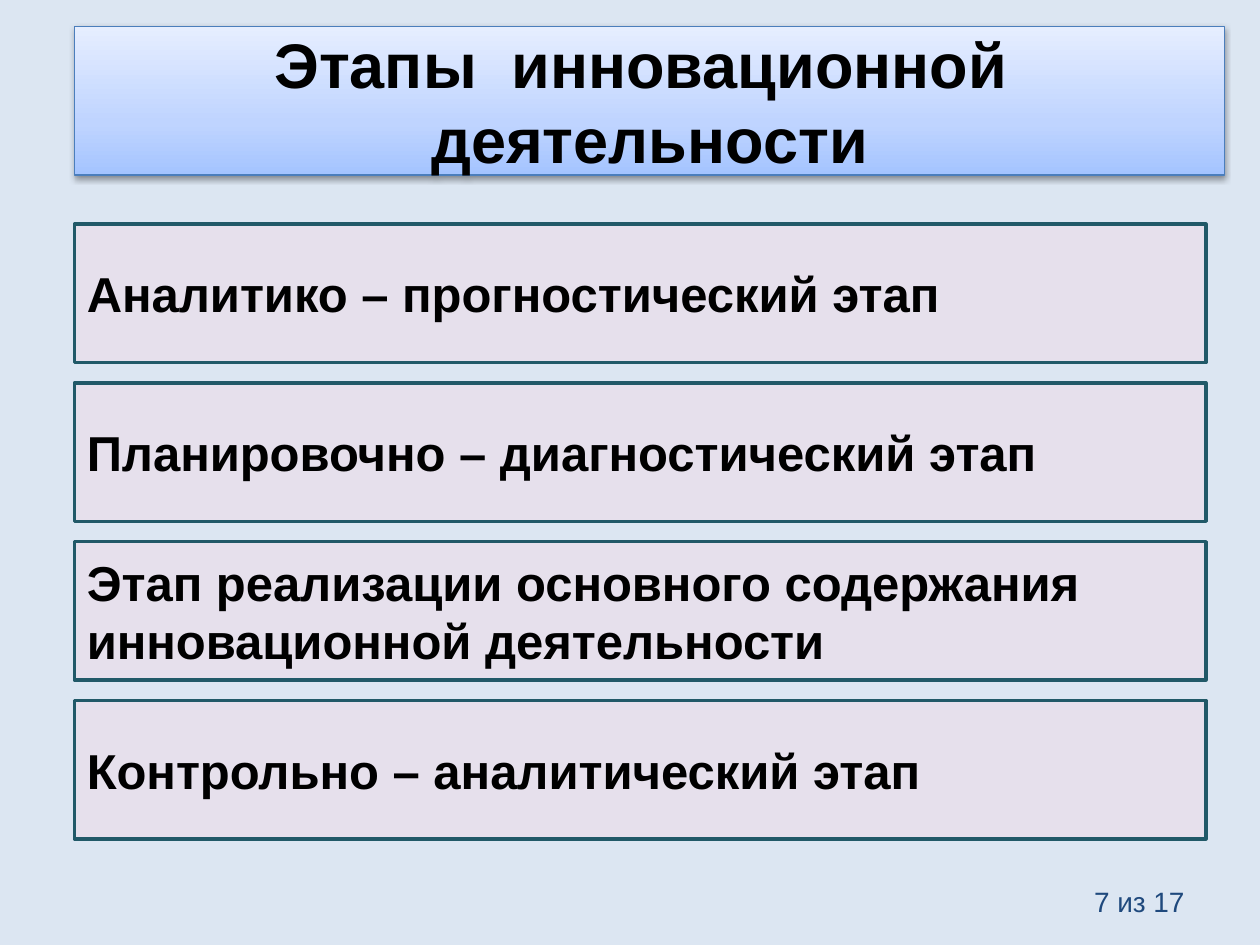
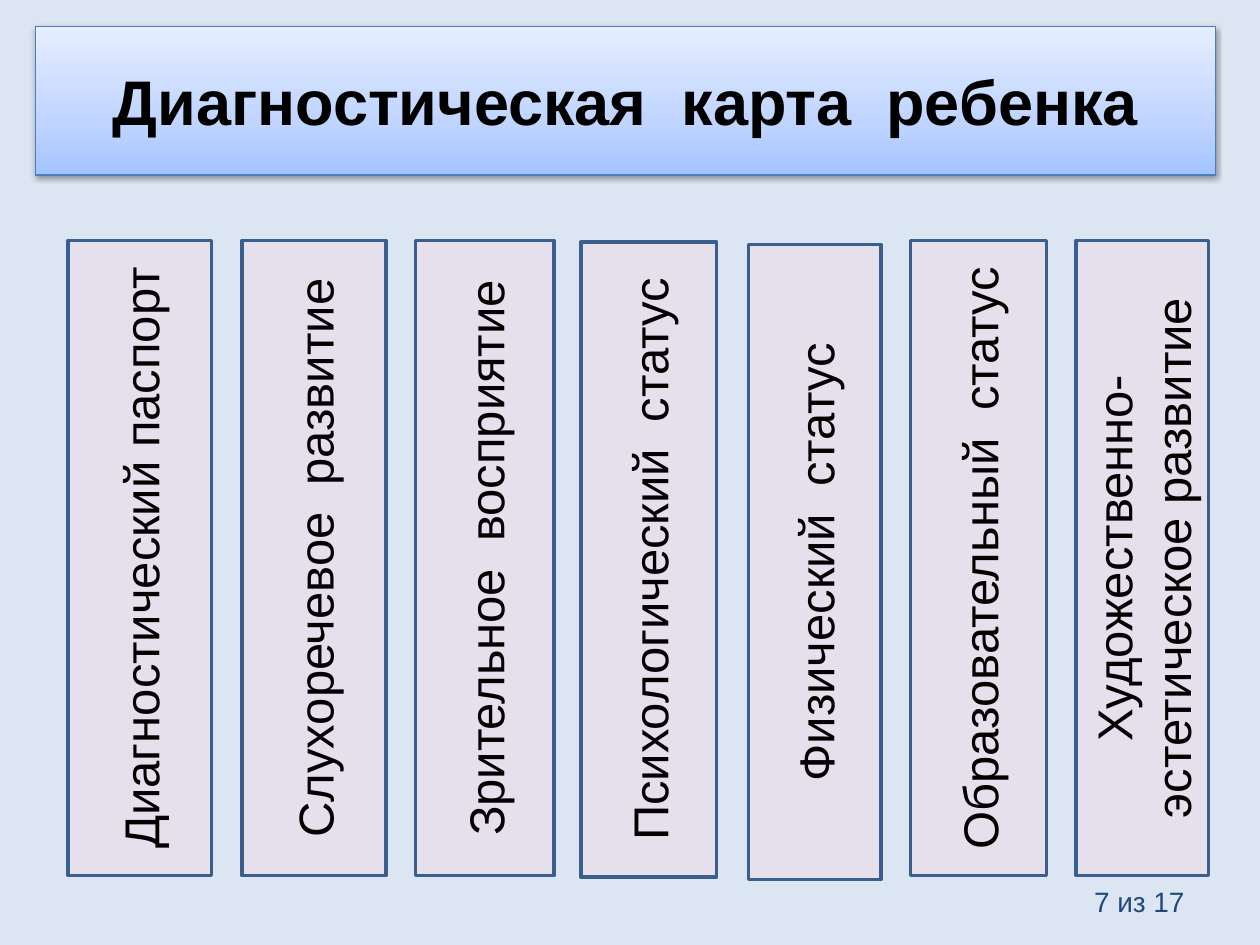
from lxml.etree import fromstring
from pptx import Presentation
from pptx.dml.color import RGBColor
from pptx.enum.shapes import MSO_SHAPE as SHAPE
from pptx.enum.text import MSO_ANCHOR as ANCHOR, MSO_AUTO_SIZE as FIT, PP_ALIGN as ALIGN
from pptx.util import Cm, Pt

STAGES_TITLE = ("Этапы  инновационной  деятельности", 1.5, 23.19)
STAGES = [
    ("Аналитико – прогностический этап", ALIGN.LEFT),
    ("Планировочно – диагностический этап", ALIGN.JUSTIFY),
    ("Этап реализации основного содержания инновационной деятельности", ALIGN.LEFT),
    ("Контрольно – аналитический этап", ALIGN.LEFT),
]
CARD_TITLE = ("Диагностическая  карта  ребенка", 0.71, 23.8)
CARD_COLUMNS = [
    ("Диагностический паспорт", 1.37, 4.85, 2.9),
    ("Слухоречевое  развитие", 4.88, 4.85, 2.9),
    ("Зрительное  восприятие", 8.38, 4.85, 2.79),
    ("Психологический  статус", 11.71, 4.88, 2.74),
    ("Физический  статус", 15.09, 4.93, 2.67),
    ("Образовательный  статус", 18.36, 4.85, 2.74),
    ("Художественно-эстетическое развитие", 21.69, 4.85, 2.67),
]
PAGE = "7 из 17"

FONT = "Arial"
BACKGROUND = RGBColor(0xDC, 0xE6, 0xF2)
LILAC = RGBColor(0xE6, 0xE0, 0xEC)
TEAL = RGBColor(0x21, 0x59, 0x68)
BLUE = RGBColor(0x3A, 0x5F, 0x8C)
TITLE_LINE = RGBColor(0x4B, 0x7E, 0xBC)
PAGE_COLOR = RGBColor(0x1F, 0x49, 0x7D)
BLACK = RGBColor(0, 0, 0)
TITLE_STOPS = [(0, "A4C4FF"), (35, "BFD4FF"), (100, "E6EEFF")]

NS = 'xmlns:a="http://schemas.openxmlformats.org/drawingml/2006/main"'
GRADIENT = (
    f'<a:gradFill {NS} rotWithShape="1"><a:gsLst>'
    + "".join(f'<a:gs pos="{pos * 1000}"><a:srgbClr val="{color}"/></a:gs>'
              for pos, color in TITLE_STOPS)
    + '</a:gsLst><a:lin ang="16200000" scaled="0"/></a:gradFill>'
)
SHADOW = (
    f'<a:effectLst {NS}><a:outerShdw blurRad="40000" dist="20000" dir="5400000" rotWithShape="0">'
    '<a:srgbClr val="000000"><a:alpha val="38000"/></a:srgbClr></a:outerShdw></a:effectLst>'
)


def place(sp, left, top, width, height):
    sp.left, sp.top, sp.width, sp.height = Cm(left), Cm(top), Cm(width), Cm(height)


def write(sp, text, size, align, color=BLACK, bold=False):
    tf = sp.text_frame
    tf.text = text
    tf.word_wrap = True
    tf.auto_size = FIT.NONE
    tf.vertical_anchor = ANCHOR.MIDDLE
    p = tf.paragraphs[0]
    p.alignment = align
    font = p.runs[0].font
    font.name, font.size, font.bold = FONT, Pt(size), bold
    font.color.rgb = color


def add_slide(prs, title, left, width):
    s = prs.slides.add_slide(prs.slide_layouts[5])
    sp = s.shapes.title
    place(sp, left, 0.53, width, 3)
    sp_pr = sp._element.spPr
    sp_pr.append(fromstring(GRADIENT))
    sp.line.color.rgb = TITLE_LINE
    sp.line.width = Pt(0.75)
    sp_pr.append(fromstring(SHADOW))
    write(sp, title, 36, ALIGN.CENTER, bold=True)
    page = s.shapes.add_textbox(Cm(18.21), Cm(17.65), Cm(5.92), Cm(1.02))
    write(page, PAGE, 16, ALIGN.RIGHT, PAGE_COLOR)
    return s


def add_box(s, text, box, line, align, bold=False):
    sp = s.shapes.add_shape(SHAPE.RECTANGLE, *map(Cm, box))
    sp.shadow.inherit = False
    sp.fill.solid()
    sp.fill.fore_color.rgb = LILAC
    sp.line.color.rgb = line
    sp.line.width = Pt(2)
    write(sp, text, 28, align, bold=bold)
    return sp


def main():
    """Build the stages slide and the diagnostic card slide."""
    prs = Presentation()
    prs.slide_width, prs.slide_height = Cm(25.4), Cm(19.05)
    fill = prs.slide_master.background.fill
    fill.solid()
    fill.fore_color.rgb = BACKGROUND

    s = add_slide(prs, *STAGES_TITLE)
    for i, (text, align) in enumerate(STAGES):
        add_box(s, text, (1.5, 4.52 + 3.2 * i, 22.81, 2.79), TEAL, align, bold=True)

    s = add_slide(prs, *CARD_TITLE)
    for text, left, top, width in CARD_COLUMNS:
        sp = add_box(s, text, (left, top, width, 12.8), BLUE, ALIGN.CENTER)
        sp.text_frame._txBody.bodyPr.set("vert", "vert270")

    prs.save("out.pptx")


if __name__ == "__main__":
    main()
